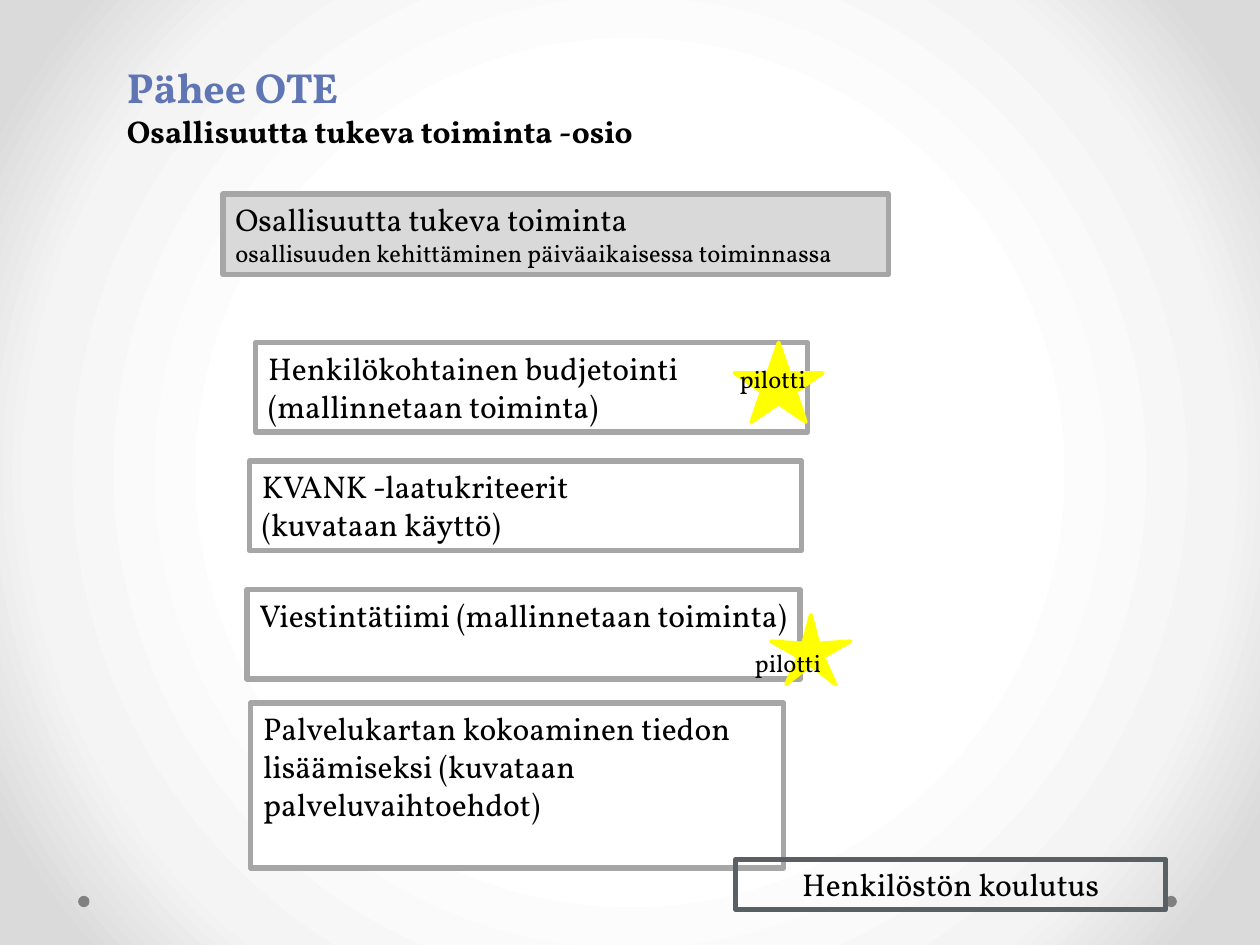
from lxml import etree
from pptx import Presentation, util as u
from pptx.dml.color import RGBColor
from pptx.enum import shapes, text
from pptx.oxml import ns

FONT = "Vollkorn"
COLORS = {
    "title": "6076B4", "text": "000000", "white": "FFFFFF", "dot": "808080",
    "border": "A6A6A6", "header": "D9D9D9", "star": "FFFF00", "training": "586064",
}
BACKGROUND = [(50, "FFFFFF"), (76, "F4F4F4"), (92, "DADADA")]

# Line formats: size in points, colour, bold
TITLE = (24, "title", True)
SUBTITLE = (18, "text", True)
BODY = (18, "text", False)
SMALL = (14, "text", False)

# Kinds: preset shape, fill, border colour, border width
S = shapes.MSO_SHAPE
KINDS = {
    "dot": (S.OVAL, "dot", None, 0),
    "label": (None, None, None, 0),
    "box": (S.RECTANGLE, "white", "border", 3),
    "header": (S.RECTANGLE, "header", "border", 3),
    "training": (S.RECTANGLE, None, "training", 3),
    "star": (S.STAR_5_POINT, "star", "star", 2.25),
}

# Back to front: kind, (left, top, width, height) in percent of the slide,
# lines, extra options
ITEMS = [
    ("dot", (92.5, 94.8, 0.9, 1.2), [], {}),
    ("dot", (6.2, 94.8, 0.9, 1.2), [], {}),
    ("label", (9.1, 5.87, 78.7, 10.8),
     [("Pähee OTE", TITLE), ("Osallisuutta tukeva toiminta -osio", SUBTITLE)], {}),
    ("box", (20.3, 36.27, 43.8, 9.47),
     [("Henkilökohtainen budjetointi", BODY), ("(mallinnetaan toiminta)", BODY)], {}),
    ("box", (19.8, 48.8, 43.8, 9.47),
     [("KVANK -laatukriteerit", BODY), ("(kuvataan käyttö)", BODY)], {}),
    ("header", (17.7, 20.53, 52.8, 8.53),
     [("Osallisuutta tukeva toiminta", BODY),
      ("osallisuuden kehittäminen päiväaikaisessa toiminnassa", SMALL)], {}),
    ("box", (19.9, 74.4, 42.3, 17.47),
     [("Palvelukartan kokoaminen tiedon lisäämiseksi (kuvataan palveluvaihtoehdot)",
       BODY)], {}),
    ("star", (58.3, 36.27, 7, 8.4), [], {}),
    ("label", (55.3, 37.87, 10.4, 4.53), [("pilotti", SMALL)], {"indent": 3.4}),
    ("box", (19.6, 62.4, 43.9, 9.47),
     [("Viestintätiimi (mallinnetaan toiminta)", BODY)], {"right": 0}),
    ("training", (58.4, 90.93, 34.1, 5.33),
     [("Henkilöstön koulutus", BODY)], {"align": text.PP_ALIGN.CENTER}),
    ("star", (61.2, 65.07, 6.3, 7.33), [], {"point": 0.154}),
    ("label", (54.7, 67.87, 12.7, 4.53), [("pilotti", SMALL)], {"indent": 5.2}),
]


def rgb(name):
    return RGBColor.from_string(COLORS[name])


def paint_background(s):
    """Radial gradient spreading from the centre of the slide."""
    s.background.fill.gradient()
    grad = next(s.element.iter(ns.qn("a:gradFill")))
    for child in list(grad):
        grad.remove(child)
    stops = etree.SubElement(grad, ns.qn("a:gsLst"))
    for pos, color in BACKGROUND:
        stop = etree.SubElement(stops, ns.qn("a:gs"), pos=str(pos * 1000))
        etree.SubElement(stop, ns.qn("a:srgbClr"), val=color)
    path = etree.SubElement(grad, ns.qn("a:path"), path="circle")
    etree.SubElement(path, ns.qn("a:fillToRect"),
                     {side: "50000" for side in "ltrb"})


def write(tf, lines, align):
    for i, (words, (size, color, bold)) in enumerate(lines):
        p = tf.paragraphs[0] if i == 0 else tf.add_paragraph()
        p.alignment = align
        r = p.add_run()
        r.text = words
        for key, value in {"name": FONT, "size": u.Pt(size), "bold": bold}.items():
            setattr(r.font, key, value)
        r.font.color.rgb = rgb(color)


def add_item(s, size, kind, box, lines, options):
    preset, fill, border, weight = KINDS[kind]
    place = [round(share * size[i % 2] / 100) for i, share in enumerate(box)]
    if preset is None:
        sp = s.shapes.add_textbox(*place)
    else:
        sp = s.shapes.add_shape(preset, *place)
        sp.shadow.inherit = False
        if fill:
            sp.fill.solid()
            sp.fill.fore_color.rgb = rgb(fill)
        else:
            sp.fill.background()
        if border:
            sp.line.color.rgb = rgb(border)
            sp.line.width = u.Pt(weight)
        else:
            sp.line.fill.background()
    if "point" in options:
        sp.adjustments[0] = options["point"]
    if lines:
        tf = sp.text_frame
        layout = {
            "word_wrap": True,
            "vertical_anchor": text.MSO_ANCHOR.TOP,
            "margin_left": round(options.get("indent", 1) * size[0] / 100),
            "margin_right": round(options.get("right", 1) * size[0] / 100),
        }
        for key, value in layout.items():
            setattr(tf, key, value)
        write(tf, lines, options.get("align", text.PP_ALIGN.LEFT))


def main():
    prs = Presentation()
    size = prs.slide_width, prs.slide_height = u.Inches(10), u.Inches(7.5)
    s = prs.slides.add_slide(prs.slide_layouts[6])
    paint_background(s)
    for item in ITEMS:
        add_item(s, size, *item)
    prs.save("out.pptx")


if __name__ == "__main__":
    main()
